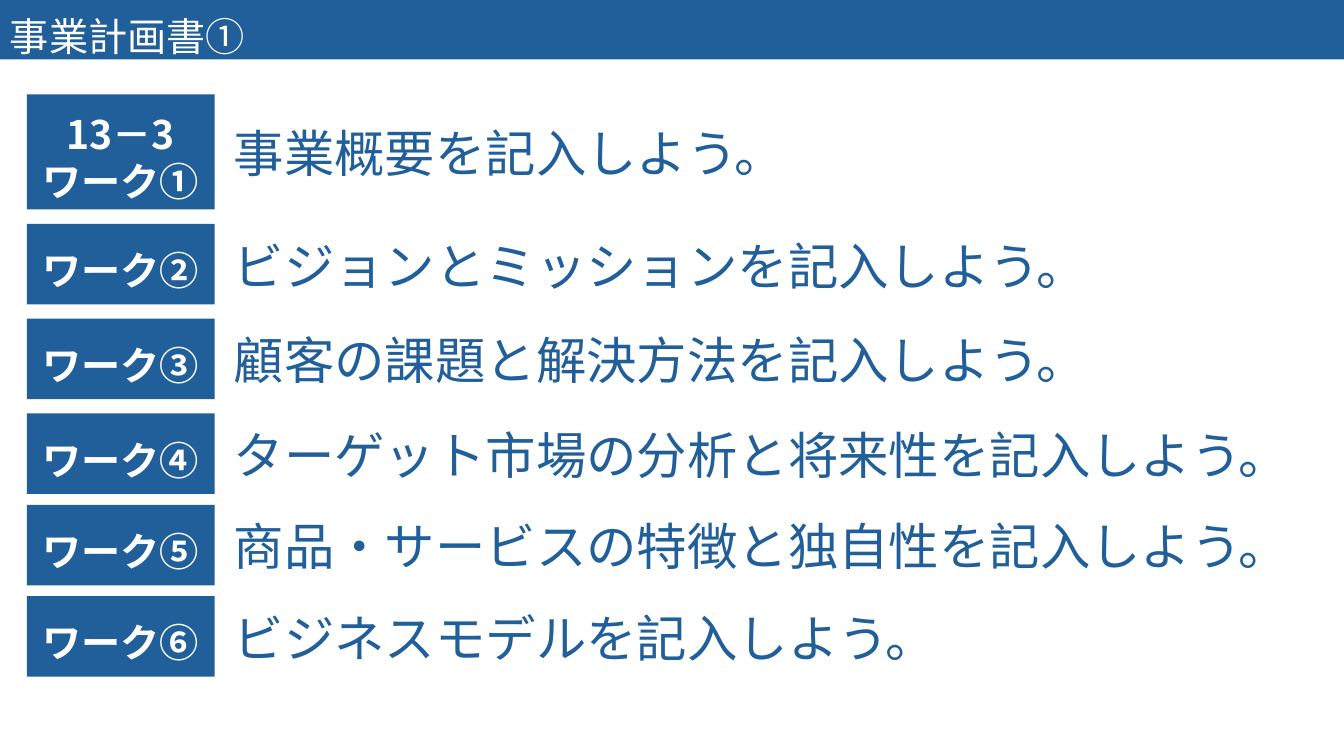
from lxml import etree
from pptx import Presentation
from pptx import util as u
from pptx.dml.color import RGBColor
from pptx.enum import shapes, text
from pptx.oxml import ns

BLUE = RGBColor(0x21, 0x5F, 0x9A)
WHITE = RGBColor(0xFF, 0xFF, 0xFF)
SLIDE_WIDTH, SLIDE_HEIGHT = 33.87, 19.05
BADGE_HEIGHT = 2.03
TASK_HEIGHT = 1.8

WORKS = [
    (2.38, 2.9, ["13－3", "ワーク①"], "事業概要を記入しよう。"),
    (5.64, BADGE_HEIGHT, ["ワーク②"], "ビジョンとミッションを記入しよう。"),
    (8.03, BADGE_HEIGHT, ["ワーク③"], "顧客の課題と解決方法を記入しよう。"),
    (10.42, BADGE_HEIGHT, ["ワーク④"], "ターゲット市場の分析と将来性を記入しよう。"),
    (12.72, BADGE_HEIGHT, ["ワーク⑤"], "商品・サービスの特徴と独自性を記入しよう。"),
    (15.02, BADGE_HEIGHT, ["ワーク⑥"], "ビジネスモデルを記入しよう。"),
]


class WorkSlide:
    """Draws the bars and task lines of one slide in a shared style."""

    font_name = "Noto Sans CJK JP"

    def __init__(self, slide):
        self.slide = slide

    def fill_text(self, frame, lines, size, color, bold=False, align=text.PP_ALIGN.LEFT):
        frame.word_wrap = True
        frame.vertical_anchor = text.MSO_ANCHOR.MIDDLE
        frame.text = "\n".join(lines)
        for line in frame.paragraphs:
            line.alignment = align
            line.font.name = self.font_name
            line.font.size = u.Pt(size)
            line.font.bold = bold
            line.font.color.rgb = color
            defaults = line._p.get_or_add_pPr().get_or_add_defRPr()
            etree.SubElement(defaults, ns.qn("a:ea"), typeface=self.font_name)

    def bar(self, left, top, width, height, lines, **style):
        bar = self.slide.shapes.add_shape(
            shapes.MSO_SHAPE.RECTANGLE,
            u.Cm(left), u.Cm(top), u.Cm(width), u.Cm(height))
        bar.shadow.inherit = False
        bar.fill.solid()
        bar.fill.fore_color.rgb = BLUE
        bar.line.fill.background()
        bar.text_frame.margin_top = u.Cm(0.41)
        self.fill_text(bar.text_frame, lines, 28, WHITE, **style)

    def task(self, middle, wording):
        task = self.slide.shapes.add_textbox(
            u.Cm(5.64), u.Cm(middle - TASK_HEIGHT / 2), u.Cm(27.15), u.Cm(TASK_HEIGHT))
        self.fill_text(task.text_frame, [wording], 36, BLUE)
        task.text_frame.auto_size = text.MSO_AUTO_SIZE.SHAPE_TO_FIT_TEXT


def main():
    deck = Presentation()
    deck.slide_width = u.Cm(SLIDE_WIDTH)
    deck.slide_height = u.Cm(SLIDE_HEIGHT)
    plan = WorkSlide(deck.slides.add_slide(deck.slide_layouts[6]))
    plan.bar(0, 0, SLIDE_WIDTH, 1.5, ["事業計画書①"])
    for top, height, label, wording in WORKS:
        plan.bar(0.68, top, 4.73, height, label, bold=True, align=text.PP_ALIGN.CENTER)
        plan.task(top + height / 2 + 0.02, wording)
    deck.save("out.pptx")


if __name__ == "__main__":
    main()
